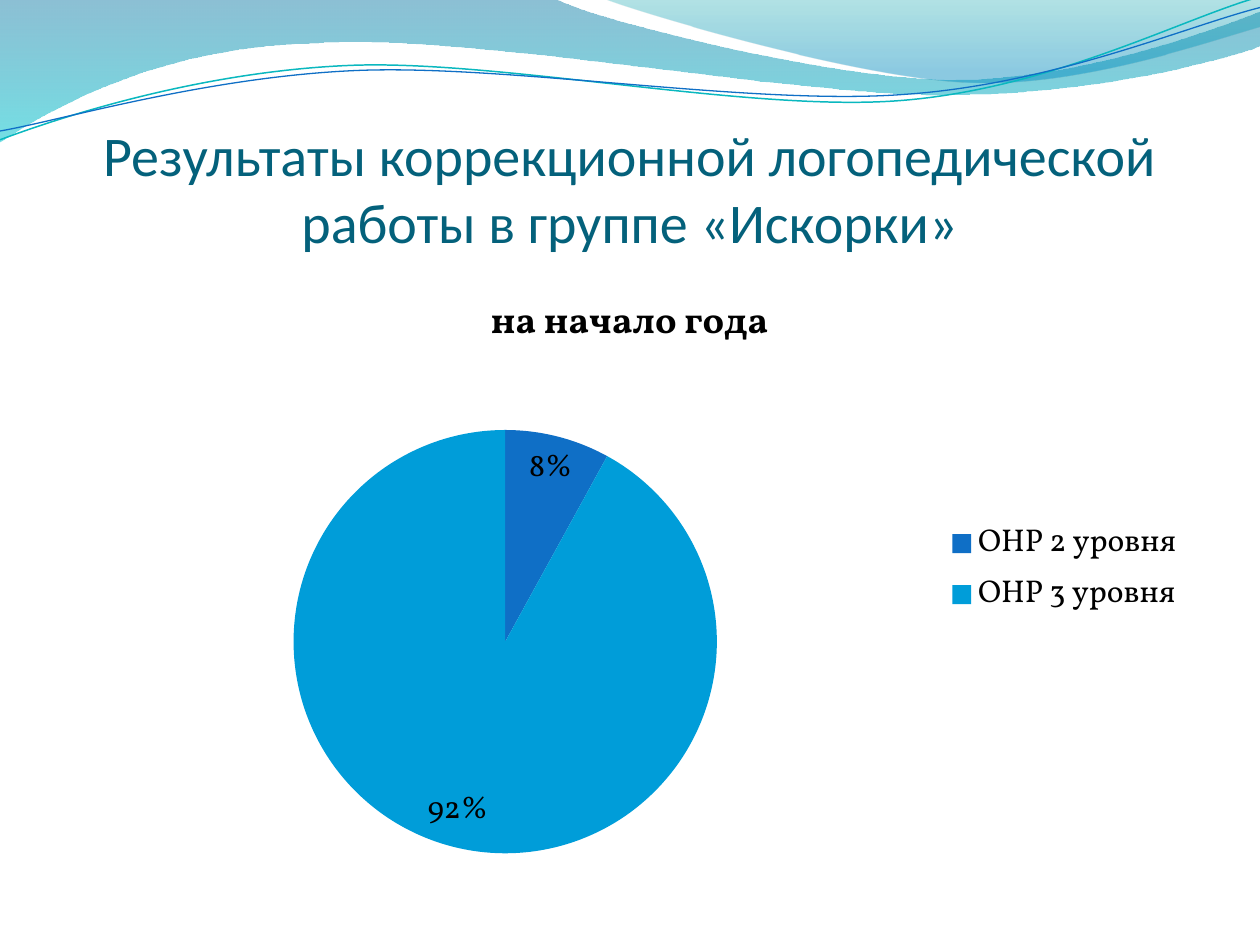
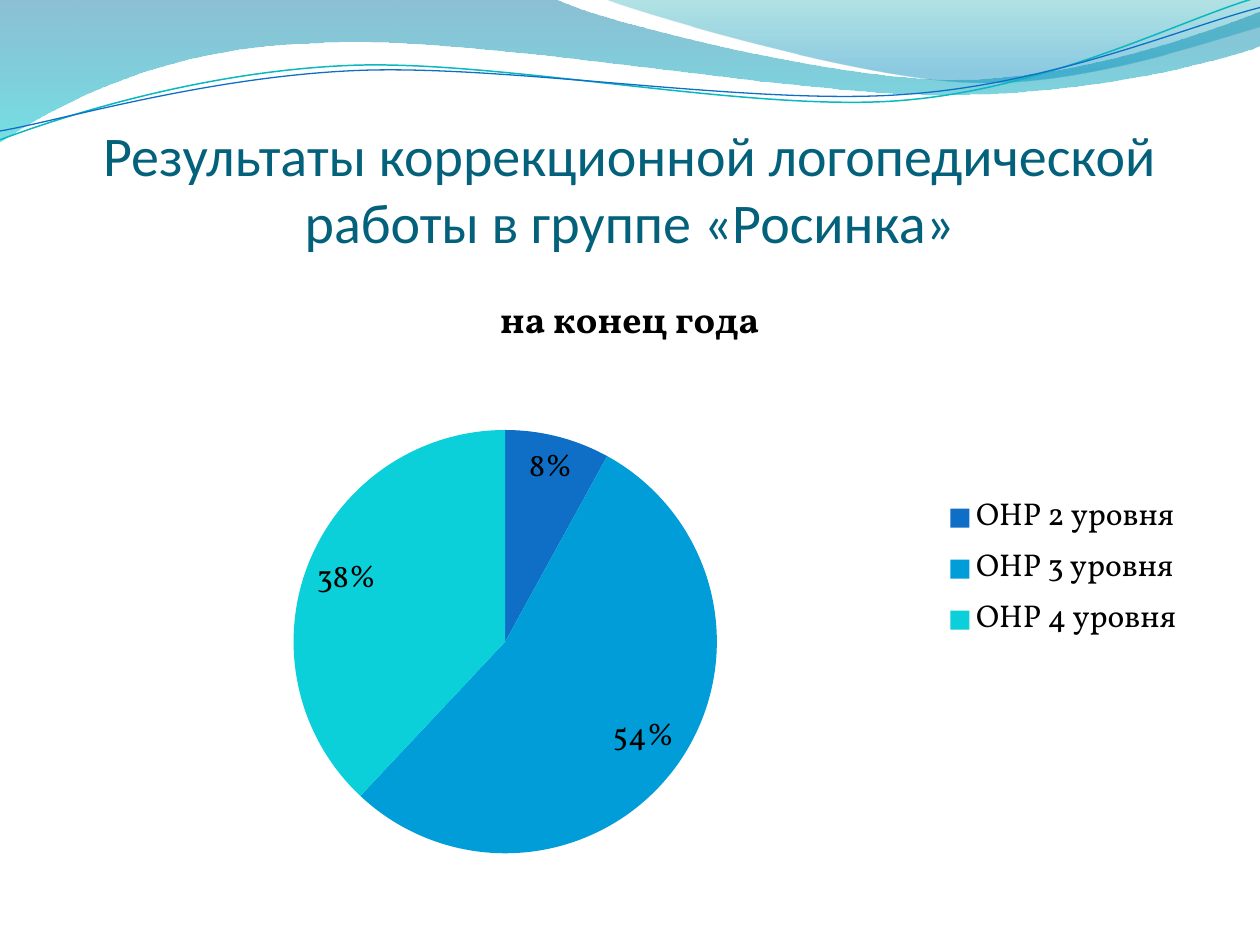
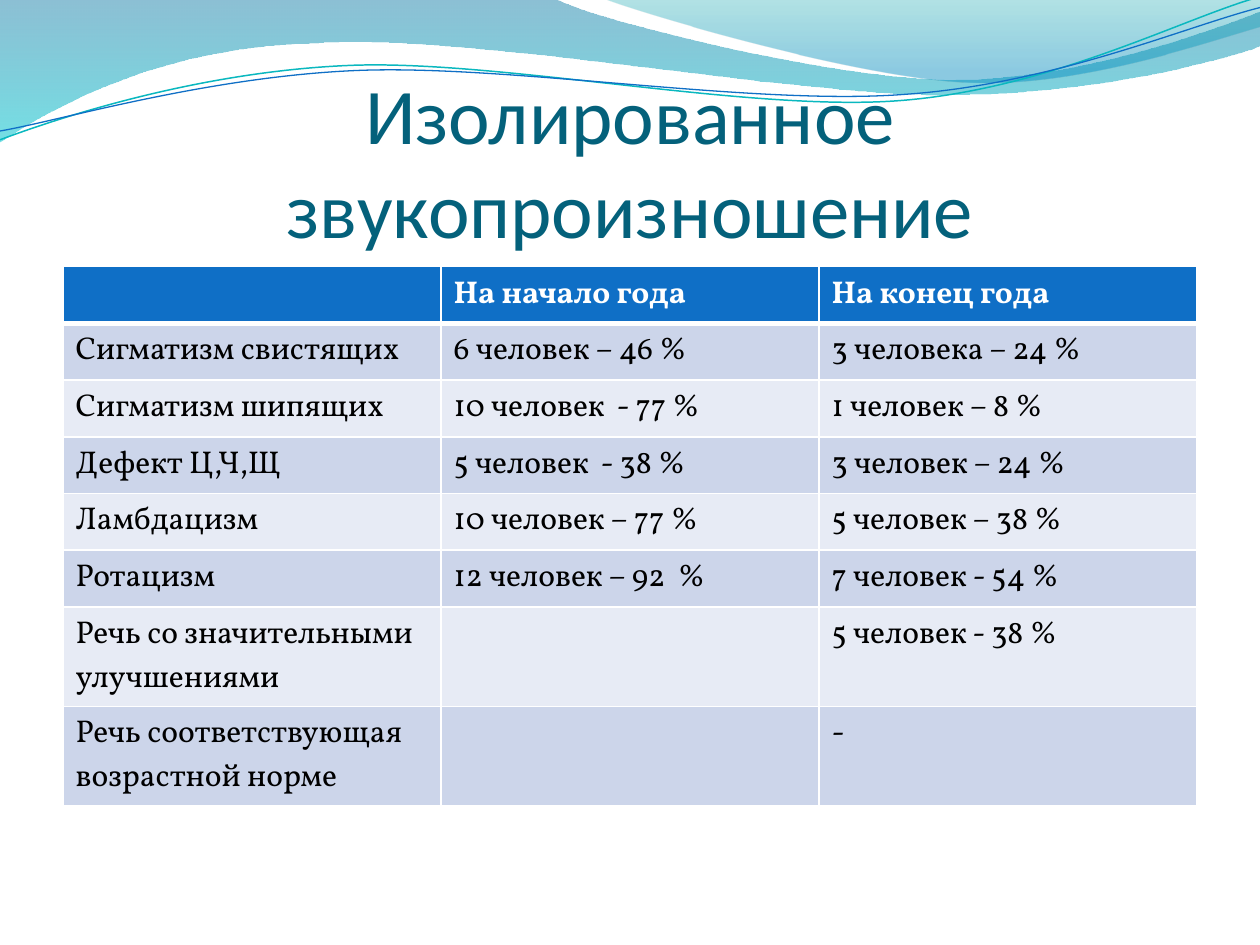
from lxml import etree
from pptx import Presentation
from pptx.chart.data import CategoryChartData
from pptx.dml.color import RGBColor
from pptx.enum.chart import XL_CHART_TYPE, XL_LABEL_POSITION, XL_LEGEND_POSITION
from pptx.enum.text import MSO_ANCHOR, PP_ALIGN
from pptx.oxml.ns import qn
from pptx.util import Inches, Pt

PIE = XL_CHART_TYPE.PIE
BEST_FIT = XL_LABEL_POSITION.BEST_FIT
LEGEND_RIGHT = XL_LEGEND_POSITION.RIGHT
BOTTOM = MSO_ANCHOR.BOTTOM
CENTER = PP_ALIGN.CENTER

SLIDE_WIDTH, SLIDE_HEIGHT = Inches(10), Inches(7.5)
COLUMN, ROW = SLIDE_WIDTH / 20, SLIDE_HEIGHT / 75
TITLE_BOX = (1, 7.7, 18, 12.5)
BODY_BOX = (1, 21.17, 18, 48)
PIE_AREA = {"x": 0.2, "y": 0.27, "w": 0.38, "h": 0.7}

TITLE_FONT, BODY_FONT = "Calibri", "Vollkorn"
TITLE_COLOR, BLACK, WHITE = "04617B", "000000", "FFFFFF"
SLICE_COLORS = ("0F6FC6", "009DD9", "0BD0D9")
HEADER_FILL, BAND_FILLS = "0F6FC6", ("E7EBF5", "CCD5EA")
BODY_SIZE, CHART_TITLE_SIZE = 18, 21.6
SINGLE_ROW, DOUBLE_ROW = Inches(0.45), Inches(0.79)
LONG_LABEL = 20

WAVE_BANDS = (
    (
        [(0, 0), (4.4, -0.01),
         ((4.76, 0.17), (6.64, 0.63), (7.58, 0.63)),
         ((8.53, 0.63), (9.58, 0.26), (10, 0.09)),
         (10.01, 0.36),
         ((9.83, 0.44), (8.7, 0.76), (7.46, 0.75)),
         ((6.22, 0.75), (3.82, 0.28), (2.57, 0.34)),
         ((1.29, 0.36), (0.46, 0.83), (-0.01, 1.13)),
         (0, 0)],
        [(0, "0074A1", 45), (1, "00C6CF", 55)],
    ),
    (
        [(4.79, -0.01),
         ((5.09, 0.11), (6.82, 0.62), (7.69, 0.65)),
         ((8.56, 0.69), (9.61, 0.32), (10, 0.21)),
         (10, 0), (4.79, -0.01)],
        [(0, "00A1A9", 30), (0.8, "008BBF", 45)],
    ),
)
WAVE_LINES = (
    (
        [(0, 1.11),
         ((0.48, 0.93), (1.58, 0.57), (2.77, 0.52)),
         ((3.95, 0.47), (5.93, 0.89), (7.13, 0.8)),
         ((8.33, 0.71), (9.38, 0.15), (9.98, -0.02))],
        "0AB8BF", 0.85,
    ),
    (
        [(0, 1.04),
         ((0.47, 0.96), (1.64, 0.61), (2.83, 0.56)),
         ((4.03, 0.51), (5.97, 0.84), (7.17, 0.75)),
         ((8.36, 0.67), (9.41, 0.21), (10, 0.06))],
        "0F6FC6", 0.75,
    ),
)

GROUP_TITLE = "Результаты коррекционной логопедической работы в группе «{}»"
GROUP_RESULTS = (
    ("Искорки", "на начало года", (0.08, 0.92)),
    ("Росинка", "на конец года", (0.08, 0.54, 0.38)),
)
SOUND_TITLE = "Изолированное звукопроизношение"
SOUND_ROWS = (
    ("", "На начало года", "На конец года"),
    ("Сигматизм свистящих", "6 человек – 46 %", "3 человека – 24 %"),
    ("Сигматизм шипящих", "10 человек  - 77 %", "1 человек – 8 %"),
    ("Дефект Ц,Ч,Щ", "5 человек  - 38 %", "3 человек – 24 %"),
    ("Ламбдацизм", "10 человек – 77 %", "5 человек – 38 %"),
    ("Ротацизм", "12 человек – 92  %", "7 человек - 54 %"),
    ("Речь со значительными улучшениями", "", "5 человек - 38 %"),
    ("Речь соответствующая возрастной норме", "", "-"),
)


def color(value):
    return RGBColor.from_string(value)


def set_values(target, **values):
    for name, value in values.items():
        setattr(target, name, value)


def set_font(font, name, size, font_color, bold=False):
    set_values(font, name=name, size=Pt(size), bold=bold)
    font.color.rgb = color(font_color)


def place(box):
    left, top, width, height = box
    return (round(left * COLUMN), round(top * ROW),
            round(width * COLUMN), round(height * ROW))


def add_outline(slide, outline, close):
    parts = [part if isinstance(part[0], tuple) else (part,) for part in outline]
    points = [(Inches(x), Inches(y)) for part in parts for x, y in part]
    builder = slide.shapes.build_freeform(*points[0])
    builder.add_line_segments(points[1:], close=close)
    shape = builder.convert_to_shape()
    shape.shadow.inherit = False
    segments = iter(list(shape.element.iter(qn("a:lnTo"))))
    for part in parts[1:]:
        first, *others = [next(segments) for _ in part]
        if others:
            curve = etree.Element(qn("a:cubicBezTo"))
            first.addprevious(curve)
            for segment in (first, *others):
                curve.append(segment[0])
                segment.getparent().remove(segment)
    return shape


def add_wave_band(slide, outline, stops):
    shape = add_outline(slide, outline, True)
    shape.line.fill.background()
    shape.fill.gradient()
    shape.fill.gradient_angle = 270
    for stop, (position, stop_color, _) in zip(shape.fill.gradient_stops, stops):
        stop.position = position
        stop.color.rgb = color(stop_color)
    gradient = shape.element.spPr.find(qn("a:gradFill"))
    for element, (_, _, opacity) in zip(gradient.iter(qn("a:srgbClr")), stops):
        etree.SubElement(element, qn("a:alpha"), val=str(opacity * 1000))
    return shape


def add_wave_line(slide, outline, line_color, width):
    shape = add_outline(slide, outline, False)
    shape.fill.background()
    shape.line.color.rgb = color(line_color)
    shape.line.width = Pt(width)
    return shape


def add_waves_to_layout(layout, slide):
    for placeholder in list(layout.placeholders):
        layout.shapes.element.remove(placeholder.element)
    waves = [add_wave_band(slide, *band) for band in WAVE_BANDS]
    waves += [add_wave_line(slide, *line) for line in WAVE_LINES]
    for wave in waves:
        layout.shapes.element.append(wave.element)


def add_title(slide, box, text, size):
    frame = slide.shapes.add_textbox(*place(box)).text_frame
    set_values(frame, word_wrap=True, vertical_anchor=BOTTOM, margin_left=0,
               margin_top=Inches(0.05), margin_right=0, margin_bottom=0)
    paragraph = frame.paragraphs[0]
    set_values(paragraph, text=text, alignment=CENTER)
    set_font(paragraph.runs[0].font, TITLE_FONT, size, TITLE_COLOR)


def set_plot_area(chart, area):
    plot_area = chart.element.find(".//" + qn("c:plotArea"))
    for old_layout in plot_area.findall(qn("c:layout")):
        plot_area.remove(old_layout)
    layout = etree.Element(qn("c:layout"))
    plot_area.insert(0, layout)
    manual = etree.SubElement(layout, qn("c:manualLayout"))
    values = {"layoutTarget": "inner", "xMode": "edge", "yMode": "edge", **area}
    for name, value in values.items():
        etree.SubElement(manual, qn(f"c:{name}"), val=str(value))


def add_level_chart(slide, box, period, shares):
    data = CategoryChartData(number_format="0%")
    data.categories = [f"ОНР {level} уровня" for level in range(2, 2 + len(shares))]
    data.add_series(period, shares)
    chart = slide.shapes.add_chart(PIE, *place(box), data).chart
    set_font(chart.font, BODY_FONT, BODY_SIZE, BLACK)
    set_plot_area(chart, PIE_AREA)

    set_values(chart, has_title=True, has_legend=True)
    paragraph = chart.chart_title.text_frame.paragraphs[0]
    paragraph.text = period
    set_font(paragraph.runs[0].font, BODY_FONT, CHART_TITLE_SIZE, BLACK, True)
    set_values(chart.legend, position=LEGEND_RIGHT, include_in_layout=False)

    plot = chart.plots[0]
    set_values(plot, vary_by_categories=True, has_data_labels=True)
    set_values(plot.data_labels, show_value=True, show_percentage=False,
               number_format="0%", number_format_is_linked=False,
               position=BEST_FIT)
    for index in range(len(shares)):
        fill = plot.series[0].points[index].format.fill
        fill.solid()
        fill.fore_color.rgb = color(SLICE_COLORS[index])


def set_borders(cell, bottom_width):
    properties = cell._tc.get_or_add_tcPr()
    for side, width in (("L", 1), ("R", 1), ("T", 1), ("B", bottom_width)):
        line = etree.SubElement(properties, qn(f"a:ln{side}"), w=str(Pt(width)))
        fill = etree.SubElement(line, qn("a:solidFill"))
        etree.SubElement(fill, qn("a:srgbClr"), val=WHITE)


def add_sound_table(slide, box, rows):
    left, top, width, _ = place(box)
    heights = [DOUBLE_ROW if len(row[0]) > LONG_LABEL else SINGLE_ROW for row in rows]
    table = slide.shapes.add_table(len(rows), len(rows[0]), left, top, width,
                                   sum(heights)).table
    table.horz_banding = False
    for row_index, texts in enumerate(rows):
        is_header = row_index == 0
        table.rows[row_index].height = heights[row_index]
        for column_index, text in enumerate(texts):
            cell = table.cell(row_index, column_index)
            set_borders(cell, 3 if is_header else 1)
            cell.fill.solid()
            cell.fill.fore_color.rgb = color(
                HEADER_FILL if is_header else BAND_FILLS[row_index % 2])
            set_values(cell, margin_left=Inches(0.1), margin_right=Inches(0.1),
                       margin_top=Inches(0.05), margin_bottom=Inches(0.05))
            paragraph = cell.text_frame.paragraphs[0]
            paragraph.text = text
            for run in paragraph.runs:
                set_font(run.font, BODY_FONT, BODY_SIZE,
                         WHITE if is_header else BLACK, is_header)


def main():
    presentation = Presentation()
    set_values(presentation, slide_width=SLIDE_WIDTH, slide_height=SLIDE_HEIGHT)
    layout = presentation.slide_layouts[6]
    slides = [presentation.slides.add_slide(layout) for _ in range(3)]
    add_waves_to_layout(layout, slides[0])

    for slide, (group, period, shares) in zip(slides, GROUP_RESULTS):
        add_title(slide, TITLE_BOX, GROUP_TITLE.format(group), 32)
        add_level_chart(slide, BODY_BOX, period, shares)

    add_title(slides[-1], TITLE_BOX, SOUND_TITLE, 45)
    add_sound_table(slides[-1], BODY_BOX, SOUND_ROWS)
    presentation.save("out.pptx")


if __name__ == "__main__":
    main()
